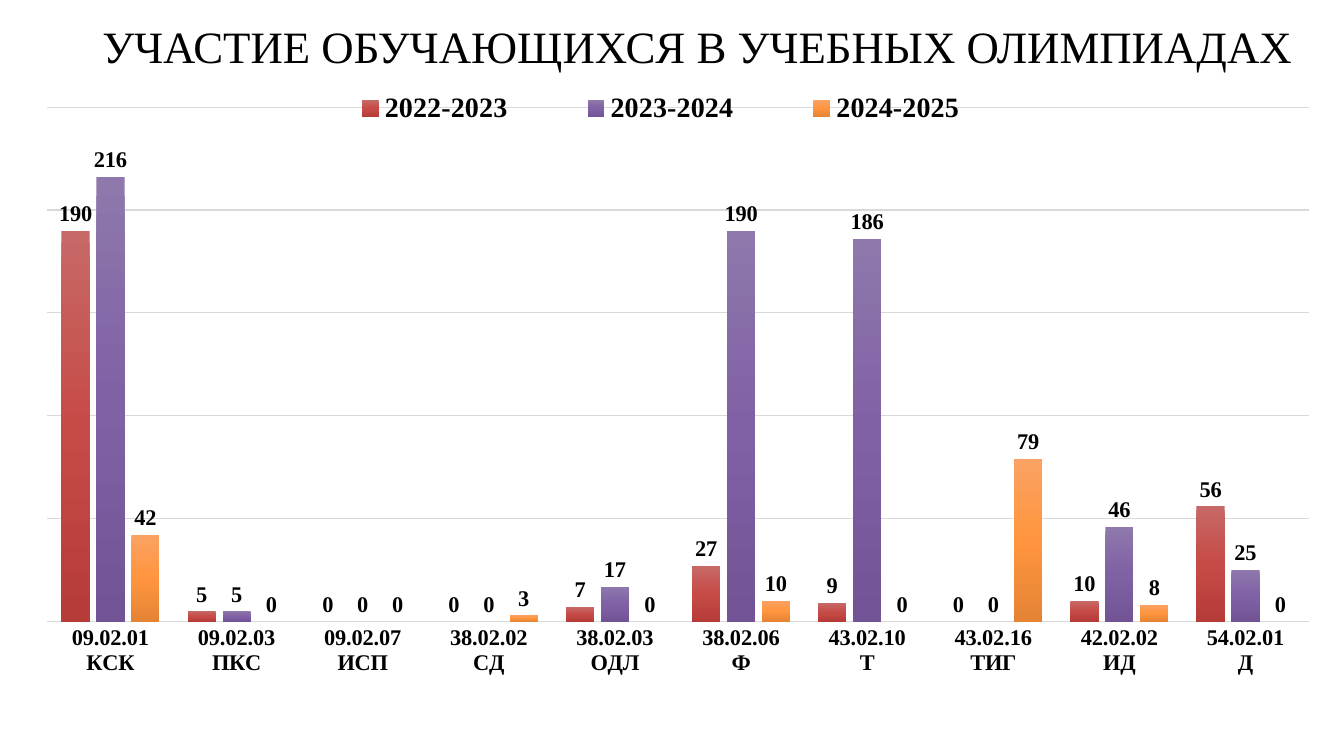
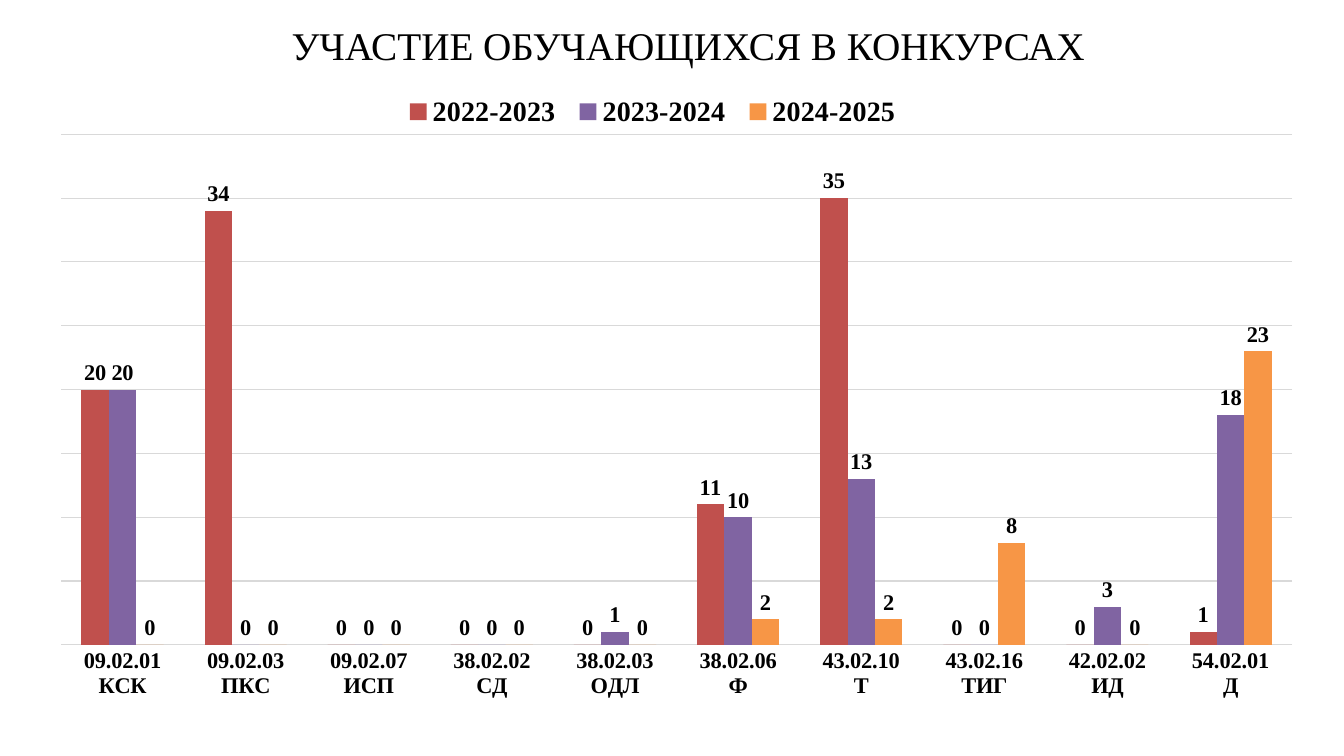
import copy
import dataclasses

import pptx
import pptx.chart.data
import pptx.dml.color
import pptx.enum.chart
import pptx.enum.text
import pptx.oxml
import pptx.oxml.ns
import pptx.util

PX = 9144  # 100 px to the inch


@dataclasses.dataclass(frozen=True)
class Theme:
    font: str = "Times New Roman"
    ink: str = "000000"
    rule: str = "D9D9D9"
    flat: tuple = ("C0504D", "8064A2", "F79646")
    shaded: tuple = (
        ("C76967", "C64B47", "B63C39"),
        ("8E78AC", "8061A5", "715396"),
        ("FAA263", "FF953E", "E58435"),
    )
    label_size: int = 16
    legend_size: int = 20
    rule_width: float = 0.75


THEME = Theme()

YEARS = ("2022-2023", "2023-2024", "2024-2025")
SPECIALTIES = (
    "09.02.01\nКСК", "09.02.03\nПКС", "09.02.07\nИСП", "38.02.02\nСД",
    "38.02.03\nОДЛ", "38.02.06\nФ", "43.02.10\nТ", "43.02.16\nТИГ",
    "42.02.02\nИД", "54.02.01\nД",
)

# Boxes are (left, top, width, height) in px; layouts are shares of the chart
SLIDES = (
    dict(
        title="УЧАСТИЕ ОБУЧАЮЩИХСЯ В УЧЕБНЫХ ОЛИМПИАДАХ",
        title_size=32,
        title_box=(31, 0, 1322, 97),
        chart_box=(24, 81, 1279, 685),
        counts=(
            (190, 5, 0, 0, 7, 27, 9, 0, 10, 56),
            (216, 5, 0, 0, 17, 190, 186, 0, 46, 25),
            (42, 0, 0, 3, 0, 10, 0, 79, 8, 0),
        ),
        fills=THEME.shaded,
        scale=(250, 50),
        gap=100,
        overlap=-24,
        axis_width=1,
        plot_layout=(0.018, 0.037, 0.978, 0.745),
        legend_layout=(0.207, 0.004, 0.573, 0.07),
    ),
    dict(
        title="УЧАСТИЕ ОБУЧАЮЩИХСЯ В КОНКУРСАХ",
        title_size=28,
        title_box=(32, 0, 1301, 94),
        chart_box=(22, 61, 1284, 689),
        counts=(
            (20, 34, 0, 0, 0, 11, 35, 0, 0, 1),
            (20, 0, 0, 0, 1, 10, 13, 0, 3, 18),
            (0, 0, 0, 0, 0, 2, 2, 8, 0, 23),
        ),
        fills=THEME.flat,
        scale=(40, 5),
        gap=150,
        overlap=0,
        axis_width=THEME.rule_width,
        plot_layout=(0.03, 0.105, 0.951, 0.735),
        legend_layout=(0.288, 0.04, 0.398, 0.065),
    ),
)


def rgb(code):
    return pptx.dml.color.RGBColor.from_string(code)


def emu(box):
    return [pptx.util.Emu(length * PX) for length in box]


def set_font(font, size, bold=False):
    font.name = THEME.font
    font.size = pptx.util.Pt(size)
    font.bold = bold
    font.color.rgb = rgb(THEME.ink)


def set_rule(line, width):
    line.color.rgb = rgb(THEME.rule)
    line.width = pptx.util.Pt(width)


def write_text(frame, text, *, size, bold=False, spacing=1.0,
               align=pptx.enum.text.PP_ALIGN.CENTER,
               anchor=pptx.enum.text.MSO_ANCHOR.MIDDLE):
    frame.word_wrap = True
    frame.auto_size = pptx.enum.text.MSO_AUTO_SIZE.NONE
    frame.vertical_anchor = anchor
    paragraph = frame.paragraphs[0]
    paragraph.alignment = align
    paragraph.line_spacing = spacing
    run = paragraph.add_run()
    run.text = text
    set_font(run.font, size, bold)


def set_layout(parent, index, shares, inner=False):
    """Fix the place of a plot area or legend within its chart."""
    for old in parent.findall(pptx.oxml.ns.qn("c:layout")):
        parent.remove(old)
    target = '<c:layoutTarget val="inner"/>' if inner else ""
    modes = "".join(f'<c:{side}Mode val="edge"/>' for side in "xy")
    sizes = "".join(f'<c:{side} val="{share}"/>' for side, share in zip("xywh", shares))
    parent.insert(index, pptx.oxml.parse_xml(
        f'<c:layout {pptx.oxml.ns.nsdecls("c")}><c:manualLayout>'
        f"{target}{modes}{sizes}</c:manualLayout></c:layout>"))


def paint_series(series, colours):
    fill = series.format.fill
    if isinstance(colours, str):
        fill.solid()
        fill.fore_color.rgb = rgb(colours)
        return
    fill.gradient()
    fill.gradient_angle = 270  # top to bottom
    stops = series.format._element.find(".//" + pptx.oxml.ns.qn("a:gsLst"))
    stops.insert(1, copy.deepcopy(stops[0]))
    for stop, colour, position in zip(fill.gradient_stops, colours, (0, 0.5, 1)):
        stop.color.rgb = rgb(colour)
        stop.position = position


def add_title(slide, box, text, size):
    heading = slide.shapes.title
    heading.left, heading.top, heading.width, heading.height = emu(box)
    write_text(heading.text_frame, text, size=size, spacing=0.9)


def add_participation_chart(slide, box, page):
    participation = pptx.chart.data.CategoryChartData()
    participation.categories = SPECIALTIES
    for year, counts in zip(YEARS, page["counts"]):
        participation.add_series(year, counts)
    chart = slide.shapes.add_chart(
        pptx.enum.chart.XL_CHART_TYPE.COLUMN_CLUSTERED, *emu(box), participation).chart
    chart.has_title = False
    set_font(chart.font, 10)

    # Columns and their values
    plot = chart.plots[0]
    plot.vary_by_categories = False
    plot.gap_width = page["gap"]
    plot.overlap = page["overlap"]
    for series, colours in zip(plot.series, page["fills"]):
        series.invert_if_negative = False
        paint_series(series, colours)
        labels = series.data_labels
        labels.show_value = True
        labels.position = pptx.enum.chart.XL_LABEL_POSITION.OUTSIDE_END
        set_font(labels.font, THEME.label_size, bold=True)
    set_layout(chart._chartSpace.chart.plotArea, 0, page["plot_layout"], inner=True)

    # Axes
    specialties = chart.category_axis
    specialties.major_tick_mark = pptx.enum.chart.XL_TICK_MARK.NONE
    set_rule(specialties.format.line, page["axis_width"])
    set_font(specialties.tick_labels.font, THEME.label_size, bold=True)
    count_axis = chart.value_axis
    count_axis.visible = False
    count_axis.minimum_scale = 0
    count_axis.maximum_scale, count_axis.major_unit = page["scale"]
    count_axis.has_major_gridlines = True
    set_rule(count_axis.major_gridlines.format.line, THEME.rule_width)

    # Legend of school years
    chart.has_legend = True
    legend = chart.legend
    legend.position = pptx.enum.chart.XL_LEGEND_POSITION.BOTTOM
    legend.include_in_layout = False
    set_font(legend.font, THEME.legend_size, bold=True)
    set_layout(legend._element, 1, page["legend_layout"])


def add_chart_slide(deck, page):
    slide = deck.slides.add_slide(deck.slide_layouts.get_by_name("Title Only"))
    add_title(slide, page["title_box"], page["title"], page["title_size"])
    add_participation_chart(slide, page["chart_box"], page)


def main():
    deck = pptx.Presentation()
    deck.slide_width, deck.slide_height = emu((1333, 750))
    for page in SLIDES:
        add_chart_slide(deck, page)
    deck.save("out.pptx")


if __name__ == "__main__":
    main()
